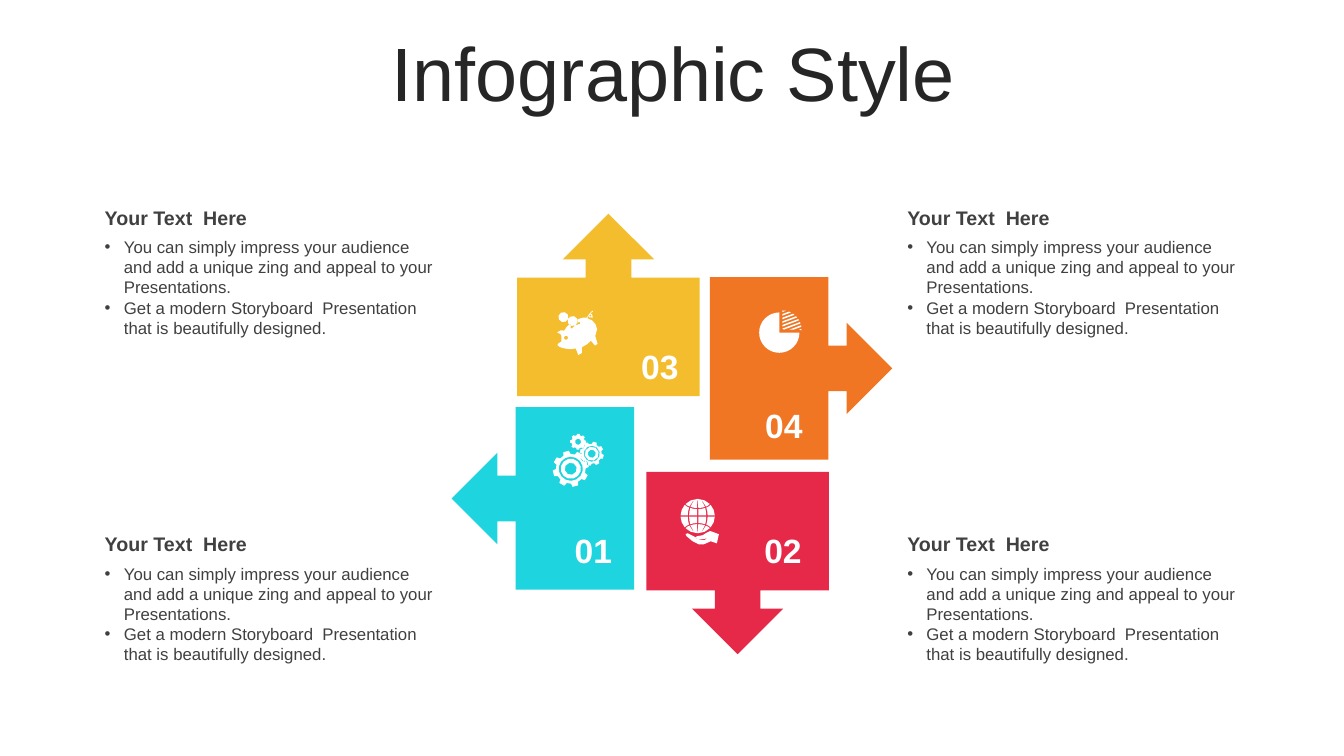
import math
from dataclasses import dataclass

import pptx
import pptx.dml.color
import pptx.enum.shapes
import pptx.enum.text
import pptx.oxml
import pptx.oxml.ns
import pptx.util
from pptx.util import Inches

Point = tuple[float, float]
Contour = list[Point]


@dataclass(frozen=True)
class Theme:
    font: str = "Arial"
    title_color: str = "262626"
    text_color: str = "404040"
    white: str = "FFFFFF"
    orange: str = "F07624"
    yellow: str = "F4BD2D"
    teal: str = "1ED4DE"
    red: str = "E62949"
    title_size: int = 54
    number_size: int = 24
    heading_size: int = 14
    body_size: int = 12


THEME = Theme()


@dataclass(frozen=True)
class ArrowBlock:
    number: str
    left: float
    top: float
    rotation: int
    color: str
    number_left: float
    number_top: float


@dataclass(frozen=True)
class Gear:
    center: Point
    radius: float
    first_tooth: int
    rings: tuple[float, ...]


ARROW_BLOCKS = [
    ArrowBlock("04", 7.04, 2.75, 90, THEME.orange, 7.45, 3.97),
    ArrowBlock("03", 5.13, 2.12, 0, THEME.yellow, 6.22, 3.38),
    ArrowBlock("01", 4.48, 4.04, 270, THEME.teal, 5.56, 5.21),
    ArrowBlock("02", 6.41, 4.68, 180, THEME.red, 7.44, 5.21),
]
GEARS = [
    Gear((5.64, 4.63), 0.18, -90, (0.12, 0.1, 0.06)),
    Gear((5.88, 4.54), 0.12, -105, (0.08, 0.07, 0.04)),
    Gear((5.78, 4.39), 0.08, -73, (0.03,)),
]
PIG_OUTLINE = [
    (5.53, 3.3), (5.56, 3.25), (5.56, 3.23), (5.54, 3.2), (5.58, 3.2), (5.61, 3.22),
    (5.65, 3.2), (5.69, 3.19), (5.7, 3.21), (5.68, 3.22), (5.68, 3.24), (5.73, 3.23),
    (5.78, 3.24), (5.79, 3.22), (5.77, 3.22), (5.78, 3.19), (5.83, 3.2), (5.87, 3.22),
    (5.91, 3.2), (5.95, 3.19), (5.95, 3.2), (5.92, 3.2), (5.93, 3.22),
    (5.92, 3.25), (5.89, 3.23), (5.89, 3.21), (5.87, 3.23), (5.9, 3.27), (5.91, 3.32),
    (5.9, 3.37), (5.85, 3.42), (5.83, 3.5), (5.8, 3.5), (5.79, 3.44), (5.74, 3.45),
    (5.68, 3.45), (5.65, 3.5), (5.61, 3.5), (5.62, 3.43), (5.57, 3.41), (5.53, 3.38),
    (5.49, 3.34), (5.48, 3.31), (5.5, 3.3),
]
HAND_OUTLINE = [
    (7.05, 5.27), (7.13, 5.3), (7.11, 5.39), (7.05, 5.37), (6.98, 5.4), (6.93, 5.4),
    (6.87, 5.37), (6.81, 5.32), (6.8, 5.3), (6.82, 5.29), (6.9, 5.33), (6.92, 5.35),
    (6.98, 5.36), (7.02, 5.34), (6.97, 5.35), (6.92, 5.35), (6.9, 5.34), (6.91, 5.32),
    (6.97, 5.31), (7, 5.29), (7.04, 5.27),
]
HEADING = "Your Text  Here"
BULLETS = [
    "You can simply impress your audience and add a unique zing and appeal to your Presentations.",
    "Get a modern Storyboard  Presentation that is beautifully designed.",
]


def arc(center: Point, radius: float, start: float = 0, sweep: float = 360) -> Contour:
    count = max(8, round(radius * 120))
    angles = [math.radians(start + sweep * step / count) for step in range(count + 1)]
    return [(center[0] + radius * math.cos(a), center[1] + radius * math.sin(a)) for a in angles]


def gear_contours(gear: Gear) -> list[Contour]:
    outline = []
    for tooth in range(8):
        for offset, scale in ((-14, 0.82), (-9, 1), (9, 1), (14, 0.82)):
            angle = math.radians(gear.first_tooth + 45 * tooth + offset)
            outline.append((gear.center[0] + gear.radius * scale * math.cos(angle),
                            gear.center[1] + gear.radius * scale * math.sin(angle)))
    return [outline] + [arc(gear.center, radius) for radius in gear.rings]


def globe_contours(center: Point, radius: float) -> list[Contour]:
    def place(across: float, row: int, fraction: float, side: int) -> Point:
        parallel = 26 + 17 * across ** 2
        low, high = ((2, parallel - 2), (parallel + 2, 89))[row]
        latitude = math.radians(low + (high - low) * fraction)
        return (center[0] + radius * across * math.cos(latitude),
                center[1] + side * radius * math.sin(latitude))

    cells = []
    for left, right in ((-1, -0.58), (-0.5, -0.04), (0.04, 0.5), (0.58, 1)):
        middle = (left + right) / 2
        border = [(left, 0), (left, 0.5), (left, 1), (middle, 1),
                  (right, 1), (right, 0.5), (right, 0), (middle, 0)]
        for side in (-1, 1):
            for row in (0, 1):
                cells.append([place(across, row, fraction, side) for across, fraction in border])
    return cells


def stripe_contours(corner: Point, radius: float) -> list[Contour]:
    slope = 0.37

    def edge(drop: float) -> Contour:
        a, b, c = 1 + slope ** 2, -2 * slope * drop, drop ** 2 - radius ** 2
        end = (-b + math.sqrt(max(0, b * b - 4 * a * c))) / (2 * a)
        start = min(max(0, drop / slope), end)
        return [(corner[0] + x, corner[1] + drop - slope * x) for x in (start, end)]

    tops = [0.036 * stripe - radius for stripe in range(8)]
    return [edge(top) + edge(top + 0.016)[::-1] for top in tops]


def add_icon(slide, contours: list[Contour], rotation: int = 0) -> None:
    outlines = [[(Inches(x), Inches(y)) for x, y in contour] for contour in contours]
    builder = slide.shapes.build_freeform(*outlines[0][0])
    for index, outline in enumerate(outlines):
        if index:
            builder.move_to(*outline[0])
        builder.add_line_segments(outline[1:], close=True)
    shape = builder.convert_to_shape()
    paint(shape, THEME.white)
    shape.rotation = rotation


def paint(shape, color: str) -> None:
    shape.shadow.inherit = False
    shape.fill.solid()
    shape.fill.fore_color.rgb = pptx.dml.color.RGBColor.from_string(color)
    shape.line.fill.background()


def add_text(slide, box: tuple[float, float, float, float], lines: list[str], size: int,
             color: str, bold: bool = False, centered: bool = False, fit: bool = True):
    text_frame = slide.shapes.add_textbox(*map(Inches, box)).text_frame
    text_frame.word_wrap = True
    if fit:
        text_frame.auto_size = pptx.enum.text.MSO_AUTO_SIZE.SHAPE_TO_FIT_TEXT
    text_frame.text = "\n".join(lines)
    for paragraph in text_frame.paragraphs:
        if centered:
            paragraph.alignment = pptx.enum.text.PP_ALIGN.CENTER
        for run in paragraph.runs:
            run.font.name = THEME.font
            run.font.size = pptx.util.Pt(size)
            run.font.bold = bold
            run.font.color.rgb = pptx.dml.color.RGBColor.from_string(color)
    return text_frame


def add_arrow_block(slide, block: ArrowBlock) -> None:
    kind = pptx.enum.shapes.MSO_SHAPE.UP_ARROW_CALLOUT
    shape = slide.shapes.add_shape(kind, *map(Inches, (block.left, block.top, 1.81, 1.81)))
    paint(shape, block.color)
    shape.rotation = block.rotation
    add_text(slide, (block.number_left, block.number_top, 0.65, 0.5), [block.number],
             THEME.number_size, THEME.white, bold=True, centered=True)


def add_text_block(slide, left: float, top: float) -> None:
    add_text(slide, (left, top, 3.49, 0.34), [HEADING], THEME.heading_size, THEME.text_color, bold=True)
    body = add_text(slide, (left, top + 0.31, 3.49, 1.11), BULLETS, THEME.body_size, THEME.text_color)
    for paragraph in body.paragraphs:
        properties = paragraph._p.get_or_add_pPr()
        properties.set("marL", str(Inches(0.19)))
        properties.set("indent", str(-Inches(0.19)))
        namespace = pptx.oxml.ns.nsdecls("a")
        properties.append(pptx.oxml.parse_xml(f'<a:buFont {namespace} typeface="{THEME.font}"/>'))
        properties.append(pptx.oxml.parse_xml(f'<a:buChar {namespace} char="•"/>'))


def main() -> None:
    presentation = pptx.Presentation()
    presentation.slide_width, presentation.slide_height = Inches(13.33), Inches(7.5)
    slide = presentation.slides.add_slide(presentation.slide_layouts[6])
    title = add_text(slide, (0.35, 0.37, 12.66, 0.79), ["Infographic Style"], THEME.title_size,
                     THEME.title_color, centered=True, fit=False)
    title.vertical_anchor = pptx.enum.text.MSO_ANCHOR.MIDDLE
    title.paragraphs[0].line_spacing = 0.9
    title.paragraphs[0].space_before = pptx.util.Pt(10)
    for block in ARROW_BLOCKS:
        add_arrow_block(slide, block)
    add_icon(slide, [HAND_OUTLINE] + globe_contours((6.92, 5.12), 0.17))
    pig_circles = [((5.59, 3.29), 0.02), ((5.91, 3.22), 0.01), ((5.73, 3.18), 0.05), ((5.67, 3.1), 0.05)]
    add_icon(slide, [PIG_OUTLINE] + [arc(*circle) for circle in pig_circles], 330)
    add_icon(slide, [contour for gear in GEARS for contour in gear_contours(gear)], 345)
    pie_center = (7.73, 3.3)
    add_icon(slide, [[pie_center] + arc(pie_center, 0.2, 0, 270)] + stripe_contours((7.76, 3.27), 0.19))
    for left in (0.94, 8.9):
        for top in (1.99, 5.23):
            add_text_block(slide, left, top)
    presentation.save("out.pptx")


if __name__ == "__main__":
    main()
